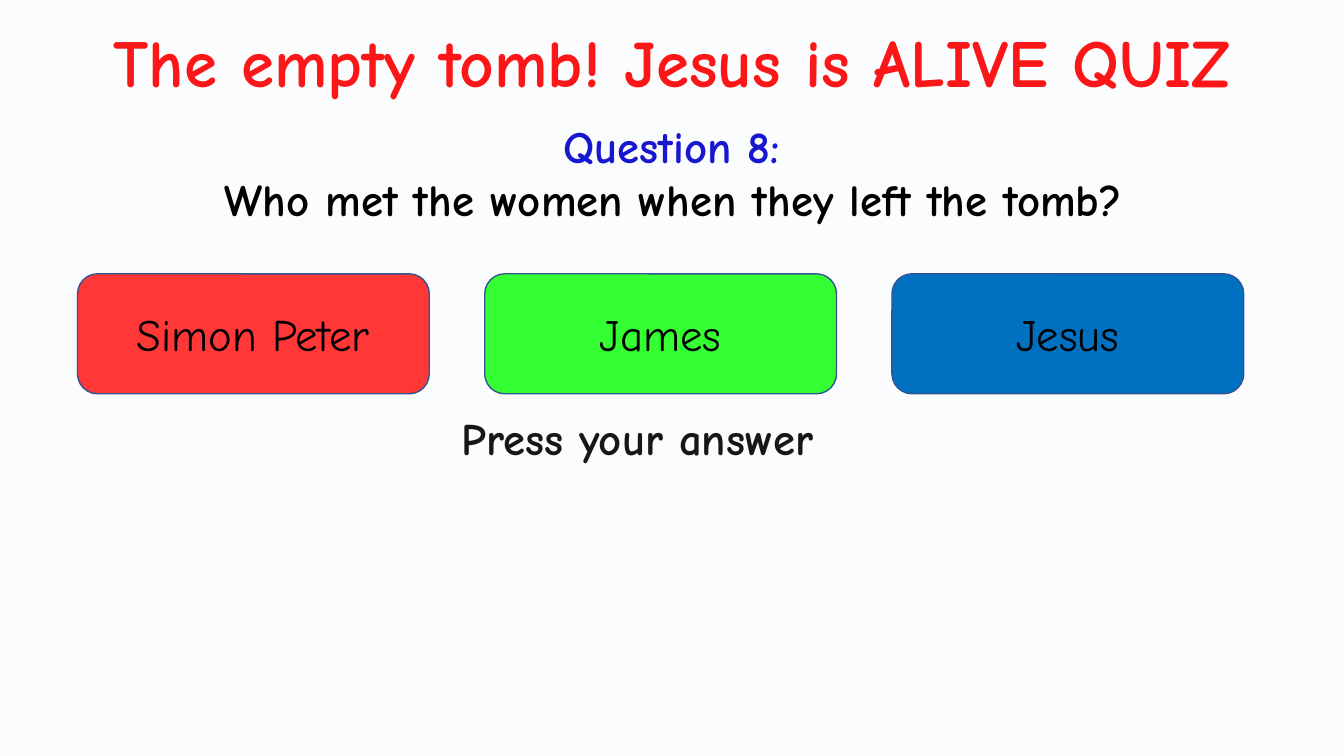
from pptx import Presentation
from pptx.dml.color import RGBColor
from pptx.enum.shapes import MSO_SHAPE
from pptx.enum.text import MSO_ANCHOR, PP_ALIGN
from pptx.oxml.ns import qn
from pptx.util import Pt
from lxml import etree

RECT, ROUND = MSO_SHAPE.RECTANGLE, MSO_SHAPE.ROUNDED_RECTANGLE
TOP, MIDDLE = MSO_ANCHOR.TOP, MSO_ANCHOR.MIDDLE
LEFT, CENTER = PP_ALIGN.LEFT, PP_ALIGN.CENTER
FACE = "Comic Neue"
WIDTH, HEIGHT = 960, 540
ANSWERS = [("Simon Peter", "FF3737"), ("James", "33FF33"), ("Jesus", "0070C0")]


def rgb(code):
    return RGBColor.from_string(code)


def write(shape, text, color="000000", size=32, bold=True, align=CENTER, anchor=TOP):
    """Fill a shape with one styled paragraph and return it."""
    frame = shape.text_frame
    frame.word_wrap = True
    frame.vertical_anchor = anchor
    para = frame.paragraphs[0]
    para.text = text
    para.alignment = align
    font = para.font
    font.name, font.size, font.bold = FACE, Pt(size), bold
    font.color.rgb = rgb(color)
    return para


def add_title(slide, left, top, width, height):
    title = slide.shapes.title
    title.left, title.top = Pt(left), Pt(top)
    title.width, title.height = Pt(width), Pt(height)
    write(title, "The empty tomb! Jesus is ALIVE QUIZ", "FF0000", 48)


def add_label(slide, box, text, **style):
    label = slide.shapes.add_textbox(*map(Pt, box))
    return write(label, text, **style)


def add_panel(slide, kind, box, color):
    panel = slide.shapes.add_shape(kind, *map(Pt, box))
    panel.shadow.inherit = False
    panel.fill.solid()
    panel.fill.fore_color.rgb = rgb(color)
    return panel


def add_veil(slide):
    """Tint the slide and whatever lies below with a pale blue."""
    veil = add_panel(slide, RECT, (0, 0, WIDTH, HEIGHT), "DAE3F3")
    veil.line.fill.background()
    tint = veil.fill._xPr.find(qn("a:solidFill"))[0]
    etree.SubElement(tint, qn("a:alpha")).set("val", "10000")


def add_answers(slide, left, top, width, height):
    gap = 39.6
    wide = (width - gap * (len(ANSWERS) - 1)) / len(ANSWERS)
    for i, (text, color) in enumerate(ANSWERS):
        box = (left + i * (wide + gap), top, wide, height)
        button = add_panel(slide, ROUND, box, color)
        button.line.color.rgb = rgb("325491")
        button.line.width = Pt(1)
        write(button, text, bold=False, anchor=MIDDLE)


def main():
    deck = Presentation()
    deck.slide_width, deck.slide_height = Pt(WIDTH), Pt(HEIGHT)
    slide = deck.slides.add_slide(deck.slide_layouts[5])

    add_title(slide, 0, 10.8, WIDTH, 65.5)
    prompt = add_label(slide, (322.6, 294.5, 484.6, 51.8), "Press your answer", align=LEFT)
    prompt.line_spacing = 0.9
    prompt.space_before = Pt(7.5)
    add_label(slide, (321.1, 81.4, 317.5, 46), "Question 8:", color="0000CC")
    add_veil(slide)
    query = add_label(slide, (64.8, 120.2, 833, 85.7),
                      "Who met the women when they left the tomb?")
    query.line_spacing = Pt(37)
    query.space_before = Pt(10)
    add_answers(slide, 55.4, 195.6, 833, 85.7)

    deck.save("out.pptx")


if __name__ == "__main__":
    main()
